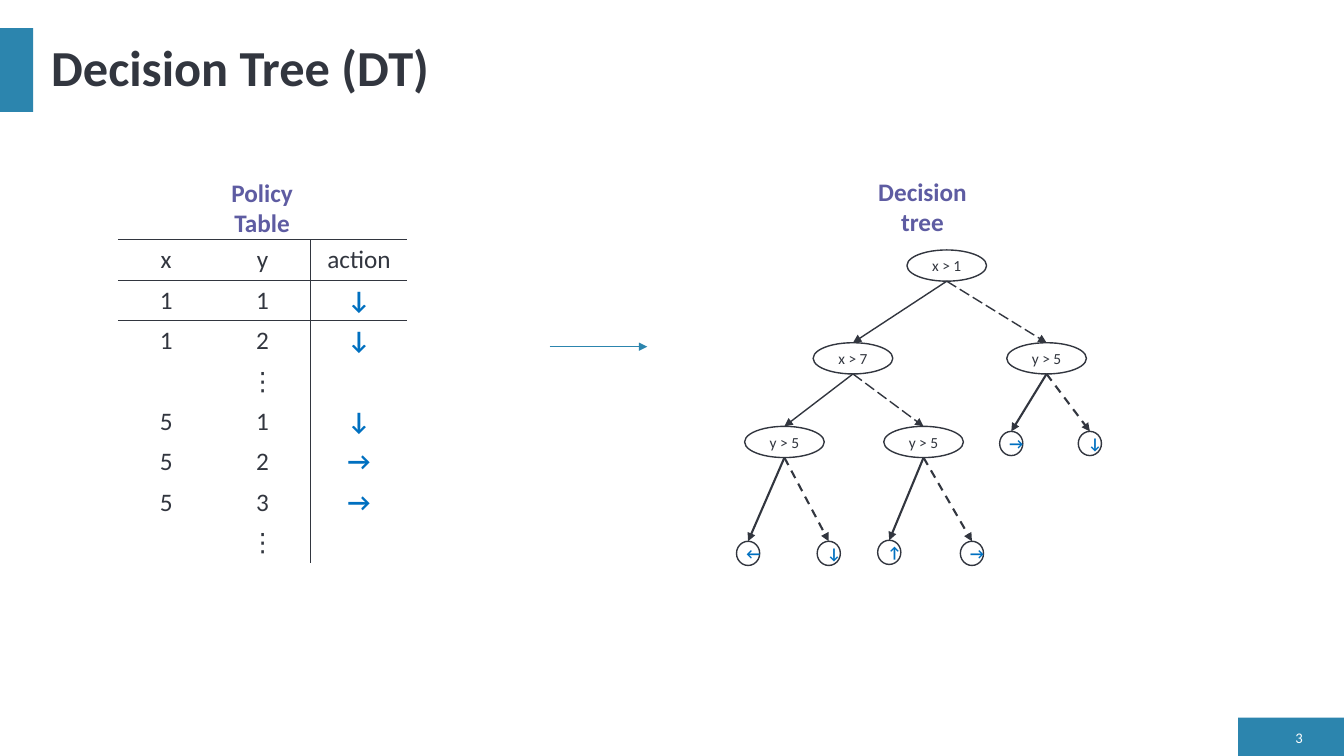
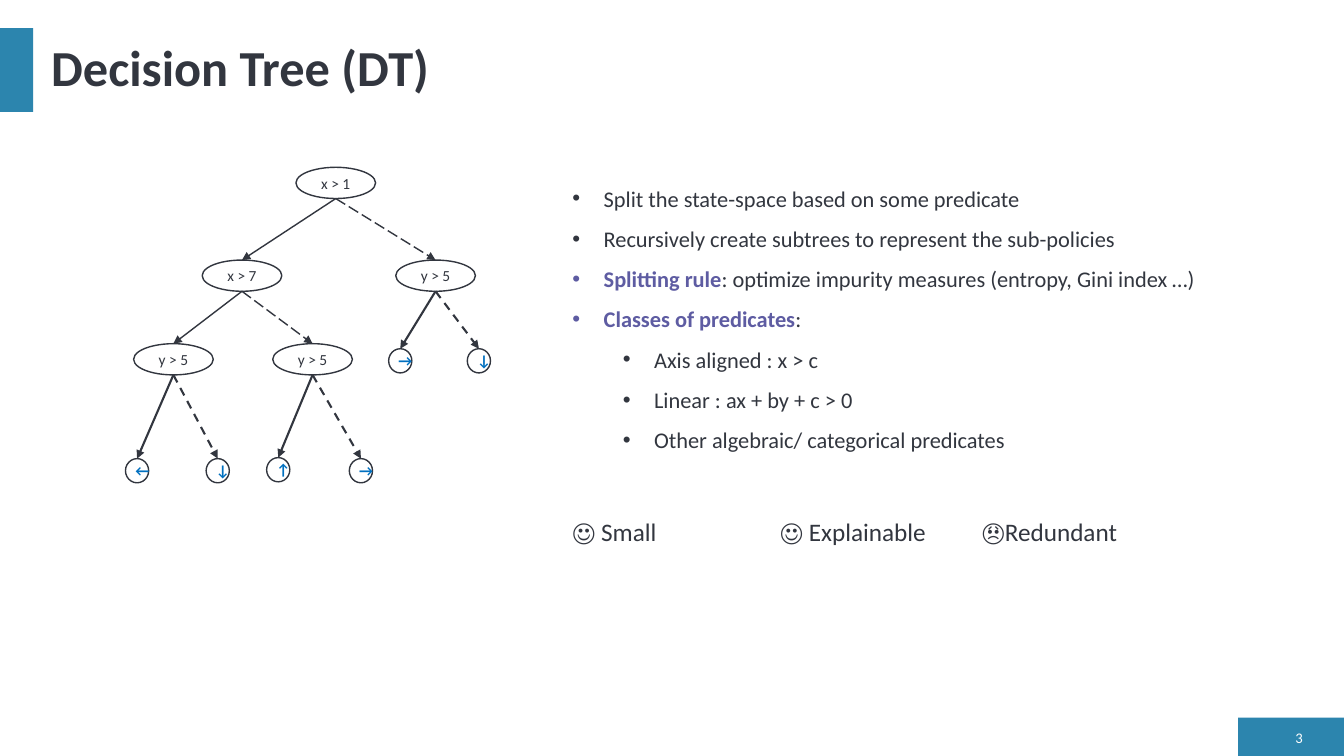
from pptx import Presentation
from pptx.dml.color import RGBColor
from pptx.enum.dml import MSO_LINE_DASH_STYLE as DASH
from pptx.enum.shapes import MSO_CONNECTOR, MSO_SHAPE
from pptx.enum.text import MSO_ANCHOR, PP_ALIGN
from pptx.oxml.ns import qn
from pptx.util import Inches, Pt
from lxml.etree import SubElement

DARK = RGBColor(0x32, 0x36, 0x3F)
TEAL = RGBColor(0x2C, 0x85, 0xAE)
PURPLE = RGBColor(0x5E, 0x5C, 0xA2)
BLUE = RGBColor(0x00, 0x70, 0xC0)
WHITE = RGBColor(0xFF, 0xFF, 0xFF)
FONT = "Calibri"

TITLE = "Decision Tree (DT)"
PAGE_NUMBER = "3"

POLICY_ROWS = [
    ("x", "y", "action"),
    ("1", "1", "↓"),
    ("1", "2", "↓"),
    ("", "⋮", ""),
    ("5", "1", "↓"),
    ("5", "2", "→"),
    ("5", "3", "→"),
    ("", "⋮", ""),
]
RULED_ROWS = 2

TREE = ("x > 1", 0, 0, [
    ("x > 7", -0.93, 0.92, [
        ("y > 5", -1.61, 1.75, [("←", -1.97, 2.89, []), ("↓", -1.17, 2.89, [])]),
        ("y > 5", -0.23, 1.75, [("↑", -0.57, 2.88, []), ("→", 0.25, 2.89, [])]),
    ]),
    ("y > 5", 0.99, 0.92, [("→", 0.64, 1.8, []), ("↓", 1.42, 1.8, [])]),
])
NODE_SIZE = (0.79, 0.31)
LEAF_SIZE = (0.23, 0.24)

BULLETS = [
    (0, "", "Split the state-space based on some predicate"),
    (0, "", "Recursively create subtrees to represent the sub-policies"),
    (0, "Splitting rule", ": optimize impurity measures (entropy, Gini index …)"),
    (0, "Classes of predicates", ":"),
    (1, "", "Axis aligned : x > c"),
    (1, "", "Linear : ax + by + c > 0"),
    (1, "", "Other algebraic/ categorical predicates"),
]
VERDICTS = ["☺ Small", "☺ Explainable", "😞Redundant"]
VERDICT_TABS = (2.06, 4.06)


def style(font, size, color=DARK, bold=False):
    font.name = FONT
    font.size = Pt(size)
    font.color.rgb = color
    font.bold = bold


def add_text(slide, text, box, size, color=DARK, bold=False,
             align=PP_ALIGN.LEFT, anchor=MSO_ANCHOR.TOP):
    frame = slide.shapes.add_textbox(*map(Inches, box)).text_frame
    frame.word_wrap = True
    frame.vertical_anchor = anchor
    paragraph = frame.paragraphs[0]
    paragraph.text = text
    paragraph.alignment = align
    style(paragraph.font, size, color, bold)
    return paragraph


def add_band(slide, box):
    band = slide.shapes.add_shape(MSO_SHAPE.RECTANGLE, *map(Inches, box))
    band.shadow.inherit = False
    band.fill.solid()
    band.fill.fore_color.rgb = TEAL
    band.line.fill.background()


def add_base_slide(presentation):
    slide = presentation.slides.add_slide(presentation.slide_layouts[6])
    add_band(slide, (12.28, 7.12, 1.05, 0.38))
    add_band(slide, (0, 0.28, 0.33, 0.83))
    title = add_text(slide, TITLE, (0.41, 0.28, 12.6, 0.83), 36, bold=True,
                     anchor=MSO_ANCHOR.MIDDLE)
    title.line_spacing = 0.9
    add_text(slide, PAGE_NUMBER, (12.6, 7.2, 0.42, 0.23), 10.5, WHITE,
             align=PP_ALIGN.RIGHT, anchor=MSO_ANCHOR.MIDDLE)
    return slide


def add_arrow(slide, start, end, width, color=DARK, dash=None):
    arrow = slide.shapes.add_connector(MSO_CONNECTOR.STRAIGHT, *map(Inches, start + end))
    arrow.line.color.rgb = color
    arrow.line.width = Pt(width)
    if dash:
        arrow.line.dash_style = dash
    SubElement(arrow.line._get_or_add_ln(), qn("a:tailEnd"), type="triangle")
    SubElement(arrow._element.spPr, qn("a:effectLst"))


def add_tree(slide, node, root_x, root_y):
    label, dx, dy, children = node
    x, y = root_x + dx, root_y + dy
    width, height = NODE_SIZE if children else LEAF_SIZE
    oval = slide.shapes.add_shape(
        MSO_SHAPE.OVAL, *map(Inches, (x - width / 2, y, width, height)))
    oval.shadow.inherit = False
    oval.fill.background()
    oval.line.color.rgb = DARK
    oval.line.width = Pt(1)
    oval.text_frame.vertical_anchor = MSO_ANCHOR.MIDDLE
    paragraph = oval.text_frame.paragraphs[0]
    paragraph.text = label
    paragraph.alignment = PP_ALIGN.CENTER
    style(paragraph.font, 11, DARK if children else BLUE, bold=not children)
    for index, child in enumerate(children):
        is_leaf = not child[3]
        dash = (DASH.DASH if is_leaf else DASH.LONG_DASH) if index else None
        add_arrow(slide, (x, y + height), (root_x + child[1], root_y + child[2]),
                  1.5 if is_leaf else 1, dash=dash)
        add_tree(slide, child, root_x, root_y)


def set_borders(cell, sides):
    properties = cell._tc.get_or_add_tcPr()
    for side in "LRTB":
        line = SubElement(properties, qn(f"a:ln{side}"), w=str(Pt(1)))
        if side in sides:
            fill = SubElement(line, qn("a:solidFill"))
            SubElement(fill, qn("a:srgbClr"), val=str(DARK))
        else:
            SubElement(line, qn("a:noFill"))


def add_policy_table(slide):
    row_count, column_count = len(POLICY_ROWS), len(POLICY_ROWS[0])
    table = slide.shapes.add_table(
        row_count, column_count, Inches(1.17), Inches(2.38),
        Inches(2.87), Inches(0.4 * row_count)).table
    table.first_row = table.horz_banding = False
    for row, values in enumerate(POLICY_ROWS):
        for column, value in enumerate(values):
            cell = table.cell(row, column)
            sides = ("", "R", "L")[column]
            sides += "T" if row <= RULED_ROWS else ""
            sides += "B" if row < RULED_ROWS else ""
            set_borders(cell, sides)
            cell.fill.background()
            paragraph = cell.text_frame.paragraphs[0]
            paragraph.text = value
            paragraph.alignment = PP_ALIGN.CENTER
            is_action = row > 0 and column == column_count - 1
            style(paragraph.font, 18, BLUE if is_action else DARK, is_action)


def add_bullets(slide):
    frame = slide.shapes.add_textbox(*map(Inches, (5.58, 1.65, 6.84, 2.89))).text_frame
    frame.word_wrap = True
    for index, (level, term, text) in enumerate(BULLETS):
        paragraph = frame.paragraphs[0] if index == 0 else frame.add_paragraph()
        paragraph.level = level
        paragraph.line_spacing = 1.5
        properties = paragraph._p.get_or_add_pPr()
        properties.set("marL", str(Inches(0.31 + 0.5 * level)))
        properties.set("indent", str(Inches(-0.31)))
        SubElement(properties, qn("a:buFont"), typeface="Arial")
        SubElement(properties, qn("a:buChar"), char="•")
        for part, color, bold in ((term, PURPLE, True), (text, DARK, False)):
            if part:
                run = paragraph.add_run()
                run.text = part
                style(run.font, 16, color, bold)


def add_verdicts(slide):
    paragraph = add_text(slide, "\t".join(VERDICTS), (5.58, 5.07, 6.84, 0.4), 18)
    properties = paragraph._p.get_or_add_pPr()
    tabs = properties.makeelement(qn("a:tabLst"))
    properties.insert(0, tabs)
    for position in VERDICT_TABS:
        SubElement(tabs, qn("a:tab"), pos=str(Inches(position)), algn="l")


def main():
    presentation = Presentation()
    presentation.slide_width = Inches(13.33)
    presentation.slide_height = Inches(7.5)

    slide = add_base_slide(presentation)
    for heading, left, top in (("Policy Table", 2, 1.71), ("Decision tree", 8.55, 1.7)):
        add_text(slide, heading, (left, top, 1.2, 0.7), 18, PURPLE, True, PP_ALIGN.CENTER)
    add_policy_table(slide)
    add_arrow(slide, (5.45, 3.44), (6.42, 3.44), 0.5, TEAL)
    add_tree(slide, TREE, 9.39, 2.48)

    slide = add_base_slide(presentation)
    add_tree(slide, TREE, 3.33, 1.66)
    add_bullets(slide)
    add_verdicts(slide)

    presentation.save("out.pptx")


if __name__ == "__main__":
    main()
